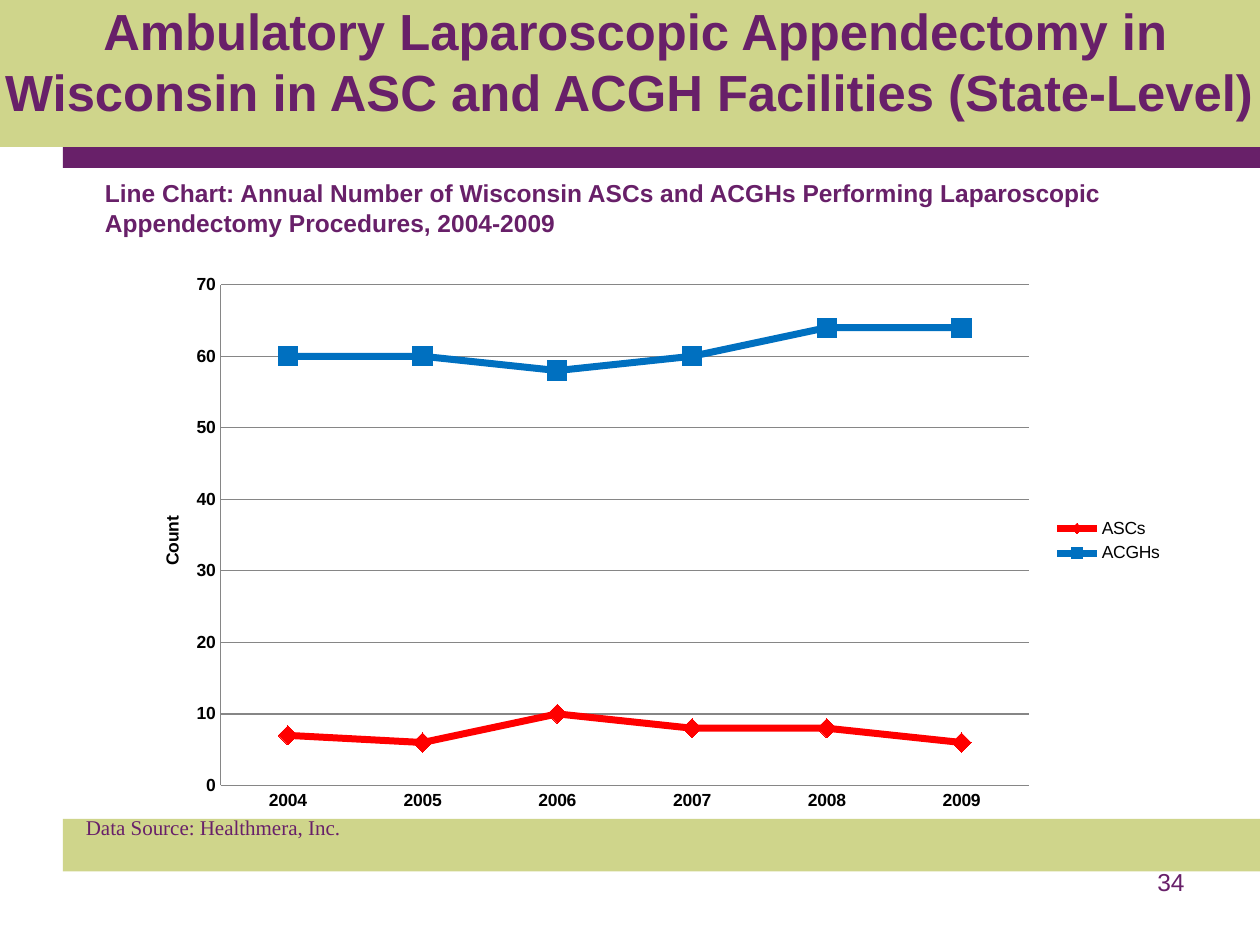
"""Build the slide on ambulatory laparoscopic appendectomy in Wisconsin."""
from lxml import etree
from pptx import Presentation
from pptx.chart.data import CategoryChartData
from pptx.dml.color import RGBColor
from pptx.enum.chart import XL_CHART_TYPE, XL_LEGEND_POSITION, XL_MARKER_STYLE, XL_TICK_MARK
from pptx.enum.shapes import MSO_SHAPE
from pptx.enum.text import PP_ALIGN
from pptx.oxml.ns import qn
from pptx.util import Pt

PX = 7620
PURPLE = RGBColor(0x68, 0x20, 0x69)
GREEN = RGBColor(0xCF, 0xD5, 0x8B)
RED = RGBColor(0xFF, 0x00, 0x00)
BLUE = RGBColor(0x00, 0x70, 0xC0)
GRAY = RGBColor(0x86, 0x86, 0x86)
BLACK = RGBColor(0x00, 0x00, 0x00)
RECT = MSO_SHAPE.RECTANGLE
LINE_MARKERS = XL_CHART_TYPE.LINE_MARKERS
DIAMOND, SQUARE = XL_MARKER_STYLE.DIAMOND, XL_MARKER_STYLE.SQUARE
NO_TICK = XL_TICK_MARK.NONE
LEGEND_RIGHT = XL_LEGEND_POSITION.RIGHT
LEFT, CENTER, RIGHT = PP_ALIGN.LEFT, PP_ALIGN.CENTER, PP_ALIGN.RIGHT

YEARS = ["2004", "2005", "2006", "2007", "2008", "2009"]
FACILITIES = [
    ("ASCs", [7, 6, 10, 8, 8, 6], RED, DIAMOND),
    ("ACGHs", [60, 60, 58, 60, 64, 64], BLUE, SQUARE),
]


class Deck:
    """Holds the style and the current slide."""

    def __init__(self, width, height):
        self.font, self.color = "Arial", PURPLE
        self.prs = Presentation()
        self.prs.slide_width, self.prs.slide_height = width * PX, height * PX
        self.s = self.prs.slides.add_slide(self.prs.slide_layouts[6])

    def box(self, at):
        return [v * PX for v in at]

    def style(self, font, size, color, bold=False):
        font.name, font.size, font.bold = self.font, Pt(size), bold
        font.color.rgb = color

    def band(self, at, color):
        sp = self.s.shapes.add_shape(RECT, *self.box(at))
        sp.shadow.inherit = False
        sp.fill.solid()
        sp.fill.fore_color.rgb = color
        sp.line.fill.background()

    def text(self, at, text, size, align=LEFT, bold=False, font=None, inset=True):
        tf = self.s.shapes.add_textbox(*self.box(at)).text_frame
        tf.word_wrap = True
        if not inset:
            tf.margin_left = tf.margin_top = tf.margin_right = tf.margin_bottom = 0
        p = tf.paragraphs[0]
        p.text, p.alignment = text, align
        self.style(p.font, size, self.color, bold)
        p.font.name = font or self.font

    def layout(self, parent, **values):
        node = parent.find(qn("c:layout"))
        if node is None:
            node = etree.Element(qn("c:layout"))
            before = parent.find(qn("c:tx"))
            parent.insert(0 if before is None else 1, node)
        for child in list(node):
            node.remove(child)
        manual = etree.SubElement(node, qn("c:manualLayout"))
        for tag, value in values.items():
            etree.SubElement(manual, qn("c:" + tag)).set("val", str(value))

    def line_chart(self, at, cats, rows, title):
        data = CategoryChartData()
        data.categories = cats
        for name, values, _, _ in rows:
            data.add_series(name, values)
        chart = self.s.shapes.add_chart(LINE_MARKERS, *self.box(at), data).chart
        self.style(chart.font, 10, BLACK)
        chart.has_title = False
        chart.has_legend = True
        chart.legend.position = LEGEND_RIGHT
        chart.legend.include_in_layout = False
        plot = chart.plots[0]
        plot.vary_by_categories = False
        for series, (_, _, color, marker) in zip(plot.series, rows):
            series.smooth = False
            series.format.line.color.rgb = color
            series.format.line.width = Pt(4)
            series.marker.style, series.marker.size = marker, 11
            series.marker.format.fill.solid()
            series.marker.format.fill.fore_color.rgb = color
            series.marker.format.line.color.rgb = color
        for axis in (chart.category_axis, chart.value_axis):
            axis.major_tick_mark = axis.minor_tick_mark = NO_TICK
            axis.format.line.color.rgb = GRAY
            self.style(axis.tick_labels.font, 10, BLACK, True)
        axis = chart.value_axis
        axis.minimum_scale, axis.maximum_scale, axis.major_unit = 0, 70, 10
        axis.has_major_gridlines = True
        axis.major_gridlines.format.line.color.rgb = GRAY
        p = axis.axis_title.text_frame.paragraphs[0]
        p.text = title
        self.style(p.font, 10, BLACK, True)
        self.layout(axis.axis_title.format.fill and chart.value_axis.axis_title.text_frame
                    and chart.element.find(".//" + qn("c:valAx") + "/" + qn("c:title")),
                    xMode="edge", yMode="edge", x=0.03, y=0.45)
        self.layout(chart.element.find(".//" + qn("c:plotArea")), layoutTarget="inner",
                    xMode="edge", yMode="edge", x=0.09, y=0.04, w=0.77, h=0.9)


def main():
    deck = Deck(1200, 900)
    deck.band((60, 780, 1140, 50), GREEN)
    deck.band((60, 110, 1140, 50), PURPLE)
    deck.band((0, 0, 1200, 140), GREEN)
    deck.text((0, 0, 1200, 120), " Ambulatory Laparoscopic Appendectomy in Wisconsin "
              "in ASC and ACGH Facilities (State-Level)", 29, CENTER, True, inset=False)
    deck.text((70, 770, 300, 60), "Data Source: Healthmera, Inc.", 12, font="Times New Roman")
    deck.text((100, 170, 1030, 85), "Line Chart: Annual Number of Wisconsin ASCs and ACGHs "
              "Performing Laparoscopic Appendectomy Procedures, 2004-2009", 14, bold=True, inset=False)
    deck.line_chart((120, 250, 1000, 530), YEARS, FACILITIES, "Count")
    deck.text((860, 820, 280, 62), "34", 14, RIGHT)
    deck.prs.save("out.pptx")


if __name__ == "__main__":
    main()
